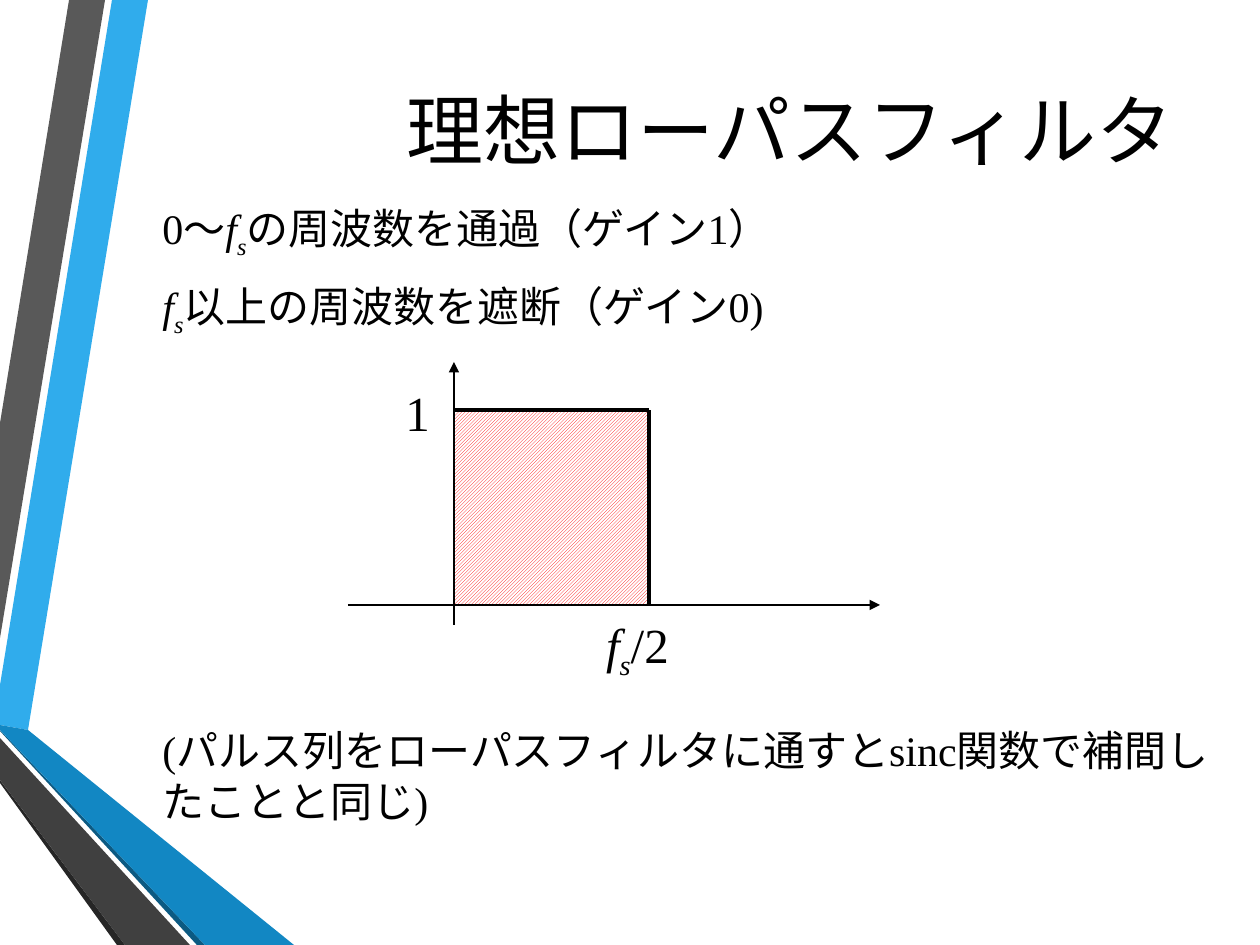
from lxml import etree
from pptx import Presentation
from pptx.dml.color import RGBColor
from pptx.enum.dml import MSO_PATTERN
from pptx.enum.shapes import MSO_CONNECTOR, MSO_SHAPE
from pptx.enum.text import MSO_ANCHOR, PP_ALIGN
from pptx.oxml.ns import qn
from pptx.util import Pt

PX = 914400 // 126
LEFT, CENTER, RIGHT = PP_ALIGN.LEFT, PP_ALIGN.CENTER, PP_ALIGN.RIGHT
TOP, MIDDLE = MSO_ANCHOR.TOP, MSO_ANCHOR.MIDDLE
STRAIGHT, RECTANGLE = MSO_CONNECTOR.STRAIGHT, MSO_SHAPE.RECTANGLE
HATCH = MSO_PATTERN.DARK_UPWARD_DIAGONAL

COLORS = {
    "ink": "000000", "paper": "FFFFFF", "band": "FF0000",
    "sky": "30ACEC", "gray": "595959", "shade": "262626",
    "navy": "0C5A82", "blue": "1287C3", "charcoal": "404040",
}

# Content: paragraphs are lists of (text, style) runs
F_S = [("f", "italic"), ("s", "sub")]
TITLE = [[("理想ローパスフィルタ", "")]]
GAINS = [
    [("0～", ""), *F_S, ("の周波数を通過（ゲイン1）", "")],
    [*F_S, ("以上の周波数を遮断（ゲイン0)", "")],
]
REMARK = [[("(パルス列をローパスフィルタに通すとsinc関数で補間したことと同じ)", "")]]
GAIN_LABEL = [[("1", "")]]
CUTOFF_LABEL = [[*F_S, ("/2", "")]]

# Ribbon facets down the left edge, in px
RIBBONS = [
    ("sky", [(0, 685), (0, 725), (28, 730), (148, 0), (112, 0)]),
    ("gray", [(105, 0), (69, 0), (0, 423), (0, 638)]),
    ("shade", [(0, 780), (0, 783), (117, 945), (125, 945)]),
    ("navy", [(0, 730), (0, 731), (197, 945), (205, 945)]),
    ("blue", [(0, 730), (205, 945), (294, 945), (28, 730), (0, 725)]),
    ("charcoal", [(0, 780), (125, 945), (190, 945), (0, 738)]),
]

# Filter response: origin, cutoff and unit gain, in px
ORIGIN_X, BASE_Y, SIDE = 454, 605, 195
CUTOFF_X, GAIN_Y = ORIGIN_X + SIDE, BASE_Y - SIDE
LINES = [  # start, end, width in points, arrowhead
    ((348, BASE_Y), (880, BASE_Y), 0.75, True),
    ((ORIGIN_X, 625), (ORIGIN_X, 362), 0.75, True),
    ((ORIGIN_X, GAIN_Y), (CUTOFF_X, GAIN_Y), 2.25, False),
    ((CUTOFF_X, BASE_Y), (CUTOFF_X, GAIN_Y), 2.25, False),
]


def rgb(name):
    return RGBColor.from_string(COLORS[name])


def add_text(slide, paragraphs, box, size, font="Times New Roman", align=LEFT,
             anchor=TOP, line=None, after=0):
    frame = slide.shapes.add_textbox(*(v * PX for v in box)).text_frame
    frame.word_wrap = True
    frame.vertical_anchor = anchor
    for i, runs in enumerate(paragraphs):
        paragraph = frame.add_paragraph() if i else frame.paragraphs[0]
        paragraph.alignment = align
        paragraph.space_after = Pt(after)
        if line:
            paragraph.line_spacing = Pt(line)
        for text, style in runs:
            run = paragraph.add_run()
            run.text = text
            run.font.name, run.font.size = font, Pt(size)
            run.font.color.rgb = rgb("ink")
            run.font.italic = style in ("italic", "sub")
            if style == "sub":
                run._r.get_or_add_rPr().set("baseline", "-25000")


def add_ribbon(slide, color, points):
    outline = slide.shapes.build_freeform(*points[0], scale=PX)
    outline.add_line_segments(points[1:], close=True)
    ribbon = outline.convert_to_shape()
    ribbon.shadow.inherit = False
    ribbon.fill.solid()
    ribbon.fill.fore_color.rgb = rgb(color)
    ribbon.line.fill.background()


def add_passband(slide):
    passband = slide.shapes.add_shape(
        RECTANGLE, *(v * PX for v in (ORIGIN_X, GAIN_Y, SIDE, SIDE)))
    passband.shadow.inherit = False
    passband.fill.patterned()
    passband.fill.pattern = HATCH
    passband.fill.fore_color.rgb = rgb("band")
    passband.fill.back_color.rgb = rgb("paper")
    passband.line.fill.background()


def add_line(slide, start, end, width, arrow):
    line = slide.shapes.add_connector(STRAIGHT, *(v * PX for v in start + end))
    line.line.color.rgb = rgb("ink")
    line.line.width = Pt(width)
    if arrow:
        etree.SubElement(line.line._get_or_add_ln(), qn("a:tailEnd"), type="triangle")
    etree.SubElement(line._element.spPr, qn("a:effectLst"))


def main():
    prs = Presentation()
    prs.slide_width, prs.slide_height = 1260 * PX, 945 * PX
    slide = prs.slides.add_slide(prs.slide_layouts[6])

    # Side decoration
    for color, points in RIBBONS:
        add_ribbon(slide, color, points)

    # Title and explanations
    add_text(slide, TITLE, (116, 58, 1071, 141), 44, font="Calibri",
             align=RIGHT, anchor=MIDDLE)
    add_text(slide, GAINS, (150, 203, 1081, 150), 24, line=29, after=15.6)
    add_text(slide, REMARK, (150, 718, 1081, 115), 24, line=29)

    # Frequency response
    add_passband(slide)
    for line in LINES:
        add_line(slide, *line)
    add_text(slide, GAIN_LABEL, (370, 376, 95, 72), 28, align=CENTER)
    add_text(slide, CUTOFF_LABEL, (584, 608, 107, 72), 28, align=CENTER)

    prs.save("out.pptx")


if __name__ == "__main__":
    main()
